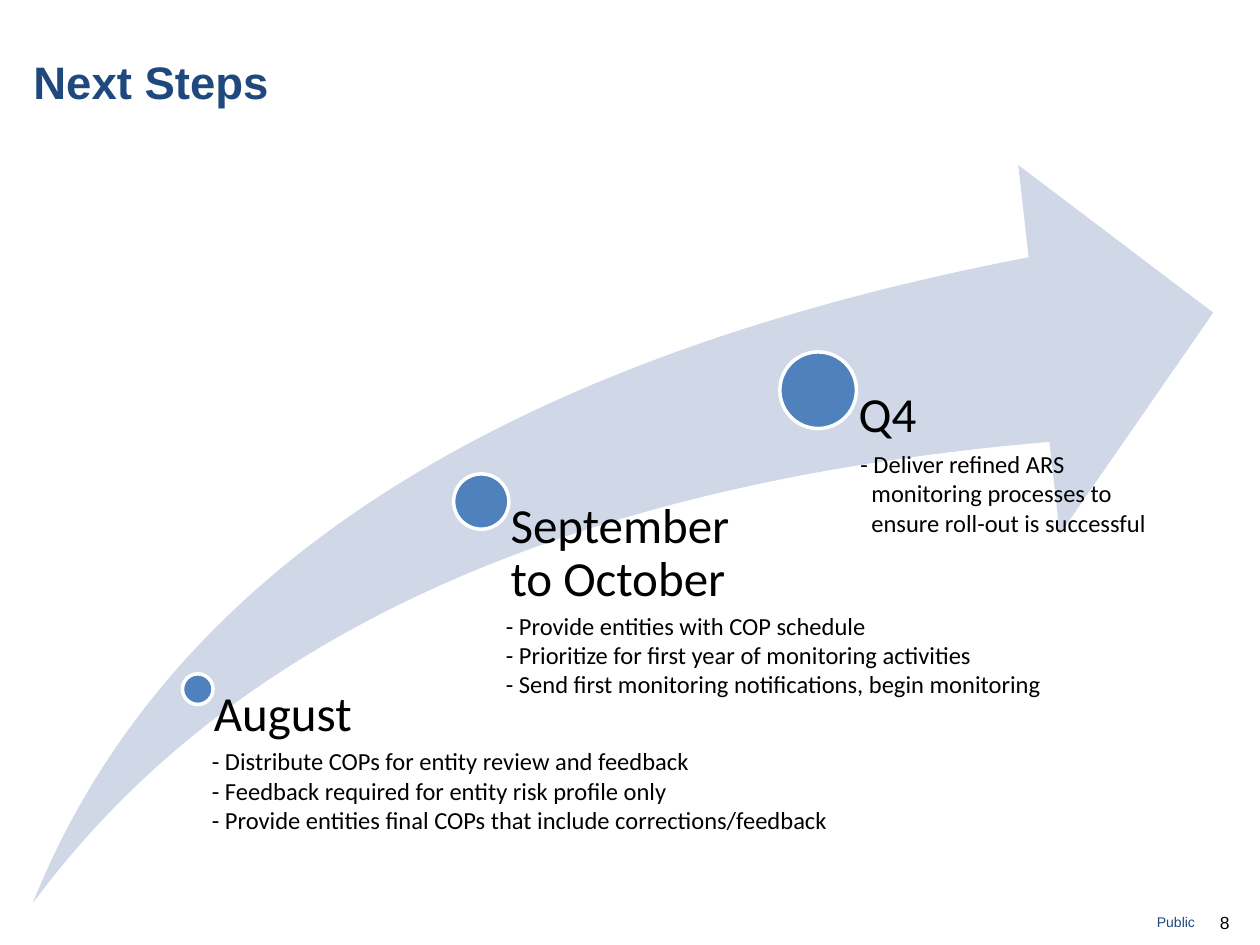
from pptx import Presentation
from pptx.dml.color import RGBColor
from pptx.enum.shapes import MSO_SHAPE
from pptx.enum.text import MSO_ANCHOR, PP_ALIGN
from pptx.util import Pt

NAVY = RGBColor(0x1F, 0x49, 0x7D)
BLUE = RGBColor(0x4F, 0x81, 0xBD)
PALE_BLUE = RGBColor(0xD0, 0xD8, 0xE8)
WHITE = RGBColor(0xFF, 0xFF, 0xFF)
BLACK = RGBColor(0x00, 0x00, 0x00)

SWOOSH, CIRCLE = MSO_SHAPE.SWOOSH_ARROW, MSO_SHAPE.OVAL
TOP, MIDDLE, BOTTOM = MSO_ANCHOR.TOP, MSO_ANCHOR.MIDDLE, MSO_ANCHOR.BOTTOM
LEFT, RIGHT = PP_ALIGN.LEFT, PP_ALIGN.RIGHT

ARROW_LEFT, ARROW_TOP, ARROW_WIDTH, ARROW_HEIGHT = 18.7, 94.3, 674.6, 421.9
ARROW_BOTTOM = ARROW_TOP + ARROW_HEIGHT
DETAIL_INDENT = 36
CONTINUATION_INDENT = 42.3

# Dot centre x and y, dot diameter, label width, label
MILESTONES = [
    (113, 393.8, 17.5, 157, "August"),
    (275, 286.6, 31.6, 162, "September to October"),
    (467.5, 223, 43.8, 162, "Q4"),
]

# Left, top, width, lines
DETAILS = [
    (78, 422.6, 425, [
        "- Distribute COPs for entity review and feedback",
        "- Feedback required for entity risk profile only",
        "- Provide entities final COPs that include corrections/feedback",
    ]),
    (246, 345, 425, [
        "- Provide entities with COP schedule",
        "- Prioritize for first year of monitoring activities",
        "- Send first monitoring notifications, begin monitoring",
    ]),
    (448.6, 252.7, 222, [
        "- Deliver refined ARS",
        "monitoring processes to",
        "ensure roll-out is successful",
    ]),
]


class SlideBuilder:
    heading_font = "Arial"
    body_font = "Calibri"

    def __init__(self, page):
        self.page = page

    def shape(self, kind, left, top, width, height, fill):
        shape = self.page.shapes.add_shape(
            kind, Pt(left), Pt(top), Pt(width), Pt(height))
        shape.shadow.inherit = False
        shape.fill.solid()
        shape.fill.fore_color.rgb = fill
        shape.line.fill.background()
        return shape

    def text(self, left, top, width, height, lines, size, font,
             color=BLACK, bold=False, anchor=TOP, align=LEFT):
        box = self.page.shapes.add_textbox(
            Pt(left), Pt(top), Pt(width), Pt(height))
        frame = box.text_frame
        frame.word_wrap = True
        frame.vertical_anchor = anchor
        frame.text = "\n".join(lines)
        for para in frame.paragraphs:
            para.alignment = align
            para.font.size = Pt(size)
            para.font.name = font
            para.font.bold = bold
            para.font.color.rgb = color
        return frame

    def swoosh(self):
        arrow = self.shape(SWOOSH, ARROW_LEFT, ARROW_TOP,
                           ARROW_WIDTH, ARROW_HEIGHT, PALE_BLUE)
        arrow.adjustments[0] = 0.25
        arrow.adjustments[1] = 0.25

    def milestone(self, x, y, diameter, width, label):
        """Draw a dot and a label box whose corner is the dot's centre."""
        dot = self.shape(CIRCLE, x - diameter / 2, y - diameter / 2,
                         diameter, diameter, BLUE)
        dot.line.color.rgb = WHITE
        dot.line.width = Pt(2)
        frame = self.text(x, y, width, ARROW_BOTTOM - y, [label], 28,
                          self.body_font)
        frame.margin_left = Pt(0.53 * diameter)
        frame.margin_top = frame.margin_right = frame.margin_bottom = 0
        frame.paragraphs[0].line_spacing = 0.9

    def details(self, left, top, width, lines):
        """Add dashed lines; a line without a dash continues the one above."""
        frame = self.text(left, top, width, 58.2, lines, 14, self.body_font,
                          anchor=MIDDLE)
        for para in frame.paragraphs:
            dashed = para.text.startswith("-")
            indent = DETAIL_INDENT if dashed else CONTINUATION_INDENT
            properties = para._p.get_or_add_pPr()
            properties.set("marL", str(int(Pt(indent))))
            properties.set("indent", "0")


def main():
    deck = Presentation()
    deck.slide_width, deck.slide_height = Pt(720), Pt(540)
    page = deck.slides.add_slide(deck.slide_layouts[6])
    builder = SlideBuilder(page)

    builder.swoosh()
    for milestone in MILESTONES:
        builder.milestone(*milestone)
    builder.text(12, 19.5, 528, 54, ["Next Steps"], 26, builder.heading_font,
                 NAVY, bold=True, anchor=MIDDLE)
    builder.text(522, 510, 168, 25, ["Public"], 8, builder.heading_font,
                 NAVY, anchor=BOTTOM, align=RIGHT)
    builder.text(690, 517.5, 30, 22.5, ["8"], 10, builder.heading_font)
    for detail in DETAILS:
        builder.details(*detail)

    deck.save("out.pptx")


if __name__ == "__main__":
    main()
